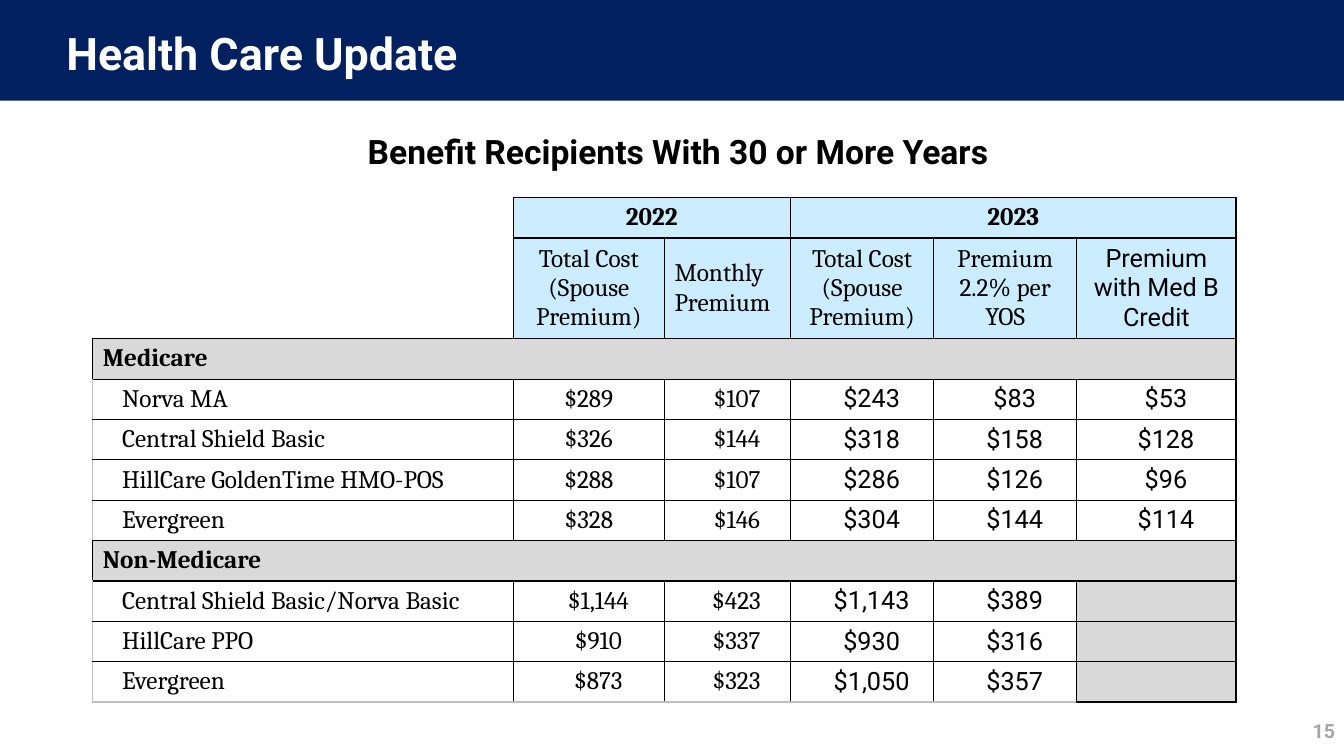
from dataclasses import dataclass

from lxml import etree
from pptx import Presentation
from pptx.dml.color import RGBColor
from pptx.enum.shapes import MSO_SHAPE
from pptx.enum.text import MSO_ANCHOR, PP_ALIGN
from pptx.oxml.ns import qn
from pptx.util import Inches, Pt

LEFT, CENTER, RIGHT = PP_ALIGN.LEFT, PP_ALIGN.CENTER, PP_ALIGN.RIGHT
TOP, MIDDLE = MSO_ANCHOR.TOP, MSO_ANCHOR.MIDDLE
RECTANGLE = MSO_SHAPE.RECTANGLE


@dataclass(frozen=True)
class Theme:
    navy: str = "002060"
    white: str = "FFFFFF"
    black: str = "000000"
    number_gray: str = "A6A6A6"
    edge_gray: str = "BFBFBF"
    section_gray: str = "D9D9D9"
    header_blue: str = "CCECFF"
    sans: str = "Roboto"
    serif: str = "Cambria"
    title_size: int = 32
    subtitle_size: int = 24
    table_size: int = 18
    number_size: int = 14


THEME = Theme()
COLUMN_WIDTHS = [4.17, 1.5, 1.25, 1.42, 1.42, 1.58]
YEARS = [("2022", 1, 2), ("2023", 3, 5)]
HEADINGS = [
    ("Total Cost\n(Spouse Premium)", CENTER, THEME.serif),
    ("Monthly Premium", LEFT, THEME.serif),
    ("Total Cost\n(Spouse Premium)", CENTER, THEME.serif),
    ("Premium 2.2% per YOS", CENTER, THEME.serif),
    ("Premium with Med B Credit", CENTER, THEME.sans),
]
SECTIONS = [
    ("Medicare", 0, 0.19, [
        ("Norva MA", "$289", "$107", "$243", "$83", "$53"),
        ("Central Shield Basic", "$326", "$144", "$318", "$158", "$128"),
        ("HillCare GoldenTime HMO-POS", "$288", "$107", "$286", "$126", "$96"),
        ("Evergreen", "$328", "$146", "$304", "$144", "$114"),
    ]),
    ("Non-Medicare", 0.19, 0.18, [
        ("Central Shield Basic/Norva Basic", "$1,144", "$423", "$1,143", "$389", ""),
        ("HillCare PPO", "$910", "$337", "$930", "$316", ""),
        ("Evergreen", "$873", "$323", "$1,050", "$357", ""),
    ]),
]


def write_text(frame, text, size, font=THEME.sans, color=THEME.black,
               bold=False, align=LEFT, indent=0):
    frame.text = text
    font_values = {"name": font, "size": Pt(size), "bold": bold}
    for paragraph in frame.paragraphs:
        paragraph.alignment = align
        if indent:
            properties = paragraph._p.get_or_add_pPr()
            properties.set("marL", str(Inches(indent)))
            properties.set("indent", "0")
        for name, value in font_values.items():
            setattr(paragraph.font, name, value)
        paragraph.font.color.rgb = RGBColor.from_string(color)


def add_text_box(slide, box, text, size, anchor=TOP, **text_format):
    frame = slide.shapes.add_textbox(*map(Inches, box)).text_frame
    frame.word_wrap = True
    frame.vertical_anchor = anchor
    write_text(frame, text, size, bold=True, **text_format)
    return frame


def add_title_band(slide, box):
    left, top, width, height = box
    band = slide.shapes.add_shape(RECTANGLE, *map(Inches, box))
    band.shadow.inherit = False
    band.fill.solid()
    band.fill.fore_color.rgb = RGBColor.from_string(THEME.navy)
    band.line.fill.background()
    add_text_box(slide, (left + 0.56, top + 0.05, 11.44, height - 0.05),
                 "Health Care Update", THEME.title_size, MIDDLE, color=THEME.white)


def add_subtitle(slide, box):
    frame = add_text_box(slide, box, "Benefit Recipients With 30 or More Years",
                         THEME.subtitle_size, align=CENTER)
    frame.paragraphs[0].space_after = Pt(12)


def add_page_number(slide, box):
    add_text_box(slide, box, "15", THEME.number_size,
                 color=THEME.number_gray, align=RIGHT)


def set_borders(cell, colors):
    properties = cell._tc.get_or_add_tcPr()
    for side, color in zip("LRTB", colors):
        line = etree.SubElement(properties, qn(f"a:ln{side}"), w=str(Pt(1)))
        if color is None:
            etree.SubElement(line, qn("a:noFill"))
        else:
            fill = etree.SubElement(line, qn("a:solidFill"))
            etree.SubElement(fill, qn("a:srgbClr"), val=color)


def border_colors(row, column, last_row):
    black, gray = THEME.black, THEME.edge_gray
    if column == 0 and row < 2:
        return None, black, None, black if row == 1 else None
    section_rows = (2, 3 + len(SECTIONS[0][3]))
    left = gray if column == 0 and row not in section_rows else black
    bottom = gray if row == last_row and column < 5 else black
    return left, black, black, bottom


def fill_cell(cell, color):
    if color is None:
        cell.fill.background()
    else:
        cell.fill.solid()
        cell.fill.fore_color.rgb = RGBColor.from_string(color)


def write_cell(cell, text, fill=None, **text_format):
    cell.vertical_anchor = MIDDLE
    write_text(cell.text_frame, text, THEME.table_size, **text_format)
    fill_cell(cell, fill)


def write_header(table):
    for row in range(2):
        write_cell(table.cell(row, 0), "")
    for year, first, last in YEARS:
        table.cell(0, first).merge(table.cell(0, last))
        write_cell(table.cell(0, first), year, THEME.header_blue,
                   font=THEME.serif, bold=True, align=CENTER)
    for column, (heading, align, font) in enumerate(HEADINGS, start=1):
        write_cell(table.cell(1, column), heading, THEME.header_blue,
                   font=font, align=align)


def write_section(table, row, section):
    name, cost_indent, premium_indent, plans = section
    table.cell(row, 0).merge(table.cell(row, 5))
    write_cell(table.cell(row, 0), name, THEME.section_gray,
               font=THEME.serif, bold=True)
    table.cell(row, 0).vertical_anchor = TOP
    indents = [0.19, cost_indent, premium_indent, 0.19, 0.19, 0.19]
    for plan_row, plan in enumerate(plans, start=row + 1):
        for column, (text, indent) in enumerate(zip(plan, indents)):
            write_cell(table.cell(plan_row, column), text,
                       None if text else THEME.section_gray,
                       font=THEME.serif if column < 3 else THEME.sans,
                       align=CENTER if column else LEFT, indent=indent)
    return row + 1 + len(plans)


def add_premium_table(slide, box):
    row_count = 2 + sum(1 + len(plans) for *_, plans in SECTIONS)
    table = slide.shapes.add_table(row_count, len(COLUMN_WIDTHS),
                                   *map(Inches, box)).table
    table.first_row = False
    table.horz_banding = False
    for column, width in zip(table.columns, COLUMN_WIDTHS):
        column.width = Inches(width)
    for index, row in enumerate(table.rows):
        row.height = Inches(0.97 if index == 1 else 0.39)
        for column, cell in enumerate(row.cells):
            set_borders(cell, border_colors(index, column, row_count - 1))
    write_header(table)
    next_row = 2
    for section in SECTIONS:
        next_row = write_section(table, next_row, section)


def main():
    presentation = Presentation()
    presentation.slide_width = Inches(13.33)
    presentation.slide_height = Inches(7.5)
    slide = presentation.slides.add_slide(presentation.slide_layouts[6])
    add_title_band(slide, (0, 0, 13.33, 1))
    add_subtitle(slide, (0.56, 1.25, 12.33, 0.6))
    add_page_number(slide, (10.56, 7.08, 2.78, 0.42))
    add_premium_table(slide, (0.92, 1.96, 11.34, 4.87))
    presentation.save("out.pptx")


if __name__ == "__main__":
    main()
